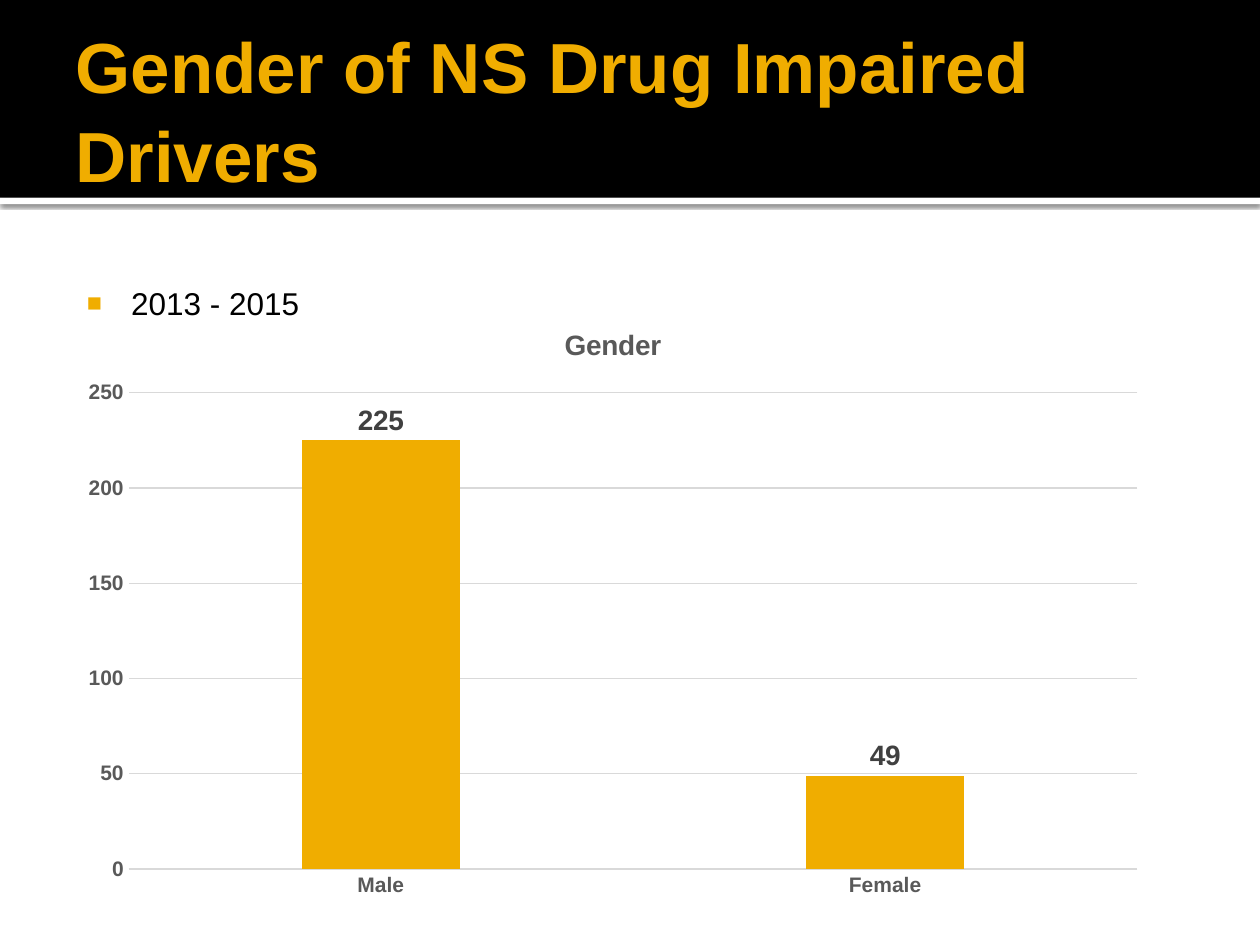
from lxml import etree
from pptx import Presentation, util as u
from pptx.chart.data import CategoryChartData
from pptx.dml.color import RGBColor
from pptx.enum import chart as c, shapes, text
from pptx.oxml import parse_xml
from pptx.oxml.ns import nsdecls, qn

TITLE = "Gender of NS Drug Impaired Drivers"
PERIOD = "2013 - 2015"
CHART_TITLE = "Gender"
COUNTS = {"Male": 225, "Female": 49}

GOLD = RGBColor(0xF0, 0xAD, 0x00)
BLACK = RGBColor(0, 0, 0)
WHITE = RGBColor(255, 255, 255)
AXIS_GREY = RGBColor(0x59, 0x59, 0x59)
LABEL_GREY = RGBColor(0x40, 0x40, 0x40)
GRID_GREY = RGBColor(0xD9, 0xD9, 0xD9)

BANDS = [((0, 1.57, 10, 0.05), WHITE, True), ((0, 0, 10, 1.57), BLACK, False)]
SHADOW = f"""<a:effectLst {nsdecls('a')}>
<a:outerShdw blurRad="31750" dist="10160" dir="5400000" algn="tl" rotWithShape="0">
<a:srgbClr val="000000"><a:alpha val="60000"/></a:srgbClr></a:outerShdw></a:effectLst>"""
TITLE_BOX = (0.5, 0.17, 9, 1.37)
BODY_BOX = (0.5, 1.94, 9, 5.06)
CHART_BOX = (0.53, 2.41, 8.67, 4.8)


def inches(box):
    return [u.Inches(value) for value in box]


def set_values(target, values):
    for name, value in values.items():
        setattr(target, name, value)


def set_font(font, size, color, bold=False):
    set_values(font, {"name": "Arial", "size": u.Pt(size), "bold": bold})
    font.color.rgb = color


def fill_placeholder(shape, content, box, margins, anchor, font):
    set_values(shape, dict(zip(("left", "top", "width", "height"), inches(box))))
    frame = shape.text_frame
    sides = ("margin_left", "margin_top", "margin_right", "margin_bottom")
    set_values(frame, dict(zip(sides, inches(margins))))
    set_values(frame, {"word_wrap": True, "auto_size": text.MSO_AUTO_SIZE.NONE,
                       "vertical_anchor": anchor})
    paragraph = frame.paragraphs[0]
    set_values(paragraph, {"alignment": text.PP_ALIGN.LEFT, "space_before": u.Pt(0)})
    run = paragraph.add_run()
    run.text = content
    set_font(run.font, *font)
    return paragraph


def add_bullet(paragraph):
    properties = paragraph._p.get_or_add_pPr()
    properties.set("marL", str(u.Inches(0.48)))
    properties.set("indent", str(u.Inches(-0.35)))
    color = etree.SubElement(properties, qn("a:buClr"))
    etree.SubElement(color, qn("a:srgbClr"), val=str(GOLD))
    etree.SubElement(properties, qn("a:buSzPct"), val="80000")
    etree.SubElement(properties, qn("a:buFont"), typeface="Arial")
    etree.SubElement(properties, qn("a:buChar"), char="■")


def add_bands(slide):
    for position, (box, color, shadowed) in enumerate(BANDS, start=2):
        band = slide.shapes.add_shape(shapes.MSO_SHAPE.RECTANGLE, *inches(box))
        band.fill.solid()
        band.fill.fore_color.rgb = color
        band.line.fill.background()
        if shadowed:
            band._element.spPr.append(parse_xml(SHADOW))
        else:
            band.shadow.inherit = False
        slide.shapes._spTree.insert(position, band._element)


def add_gender_chart(slide):
    data = CategoryChartData()
    data.categories = list(COUNTS)
    data.add_series("Series 1", list(COUNTS.values()))
    chart = slide.shapes.add_chart(
        c.XL_CHART_TYPE.COLUMN_CLUSTERED, *inches(CHART_BOX), data).chart
    set_values(chart, {"has_legend": False, "has_title": True})
    set_values(chart.font, {"name": "Cabin", "size": u.Pt(10)})
    chart.chart_title.include_in_layout = False
    heading = chart.chart_title.text_frame
    heading.text = CHART_TITLE
    set_font(heading.paragraphs[0].runs[0].font, 16, AXIS_GREY, True)

    for axis in (chart.category_axis, chart.value_axis):
        set_values(axis, {"major_tick_mark": c.XL_TICK_MARK.NONE,
                          "minor_tick_mark": c.XL_TICK_MARK.NONE})
        set_font(axis.tick_labels.font, 12, AXIS_GREY, True)
    set_values(chart.value_axis, {"minimum_scale": 0, "maximum_scale": 250,
                                  "major_unit": 50, "has_major_gridlines": True})
    chart.value_axis.format.line.fill.background()
    for line in (chart.category_axis.format.line,
                 chart.value_axis.major_gridlines.format.line):
        line.color.rgb = GRID_GREY
        line.width = u.Pt(0.75)

    plot = chart.plots[0]
    set_values(plot, {"gap_width": 219, "overlap": -27,
                      "vary_by_categories": False, "has_data_labels": True})
    set_values(plot.data_labels, {"show_value": True,
                                  "position": c.XL_LABEL_POSITION.OUTSIDE_END})
    set_font(plot.data_labels.font, 16, LABEL_GREY, True)
    fill = plot.series[0].format.fill
    fill.solid()
    fill.fore_color.rgb = GOLD


def main():
    presentation = Presentation()
    set_values(presentation, {"slide_width": u.Inches(10), "slide_height": u.Inches(7.5)})
    slide = presentation.slides.add_slide(presentation.slide_layouts[1])
    add_bands(slide)
    title = fill_placeholder(slide.shapes.title, TITLE, TITLE_BOX, (0.1, 0.05, 0.05, 0.05),
                             text.MSO_ANCHOR.MIDDLE, (40.5, GOLD, True))
    title.line_spacing = 1.04
    period = fill_placeholder(slide.placeholders[1], PERIOD, BODY_BOX, (0.06, 0.31, 0.1, 0.05),
                              text.MSO_ANCHOR.TOP, (18, BLACK))
    add_bullet(period)
    add_gender_chart(slide)
    presentation.save("out.pptx")


if __name__ == "__main__":
    main()
